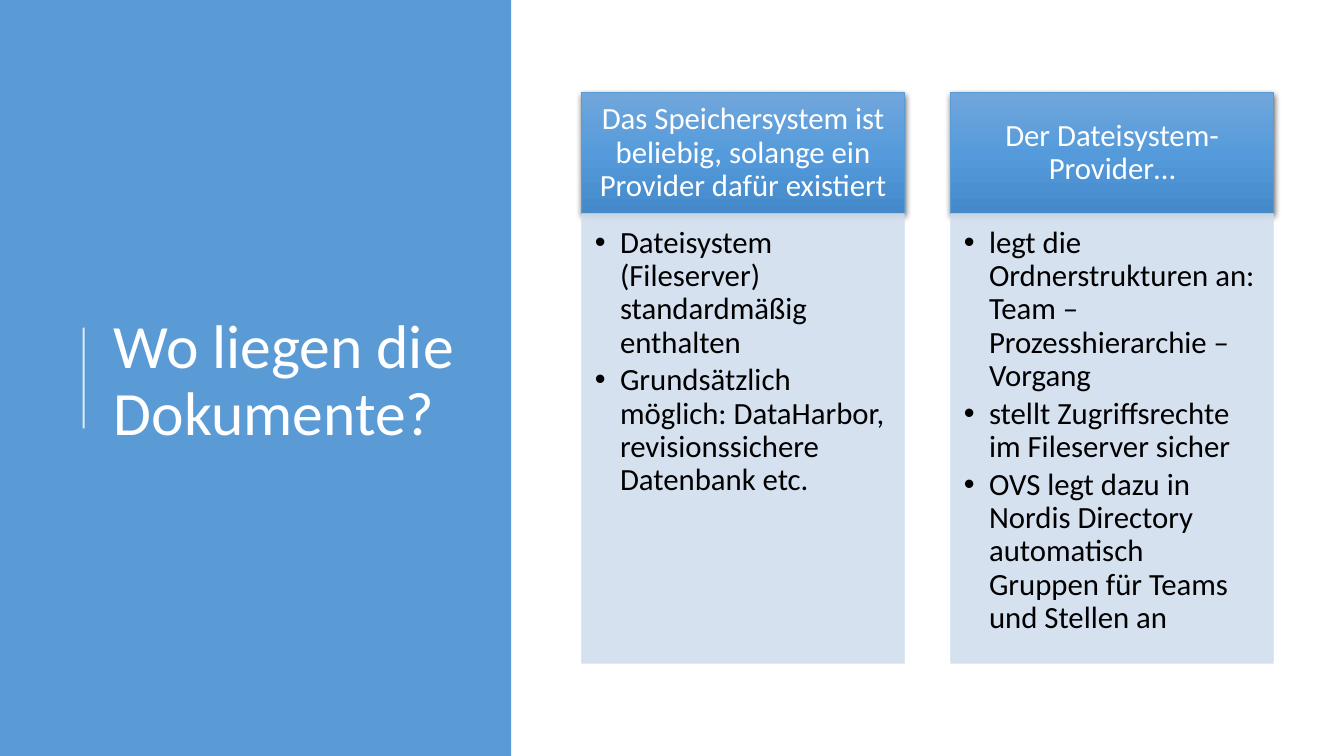
from pptx import Presentation
from pptx.dml.color import RGBColor
from pptx.enum.shapes import MSO_CONNECTOR, MSO_SHAPE
from pptx.enum.text import MSO_ANCHOR, PP_ALIGN
from pptx.oxml import parse_xml
from pptx.oxml.ns import nsdecls, qn
from pptx.util import Pt
from lxml.etree import SubElement

PX = 9144
WIDE, HIGH = 1333, 750
BLUE = RGBColor(0x5B, 0x9B, 0xD5)
PALE = RGBColor(0xD2, 0xDE, 0xEF)
WHITE = RGBColor(0xFF, 0xFF, 0xFF)
BLACK = RGBColor(0, 0, 0)
GRADE = ((0, RGBColor(0x71, 0xA6, 0xDB)),
         (50, RGBColor(0x55, 0x9B, 0xDB)),
         (100, RGBColor(0x44, 0x8A, 0xCA)))
LEFT, STEP, WIDTH = 577, 366, 320
TOP, SPLIT, END = 92, 212, 658
CARDS = (
    ("Das Speichersystem ist beliebig, solange ein Provider dafür existiert",
     ("Dateisystem (Fileserver) standardmäßig enthalten",
      "Grundsätzlich möglich: DataHarbor, revisionssichere Datenbank etc.")),
    ("Der Dateisystem-Provider…",
     ("legt die Ordnerstrukturen an: Team – Prozesshierarchie – Vorgang",
      "stellt Zugriffsrechte im Fileserver sicher",
      "OVS legt dazu in Nordis Directory automatisch Gruppen für Teams "
      "und Stellen an")),
)


def scale(*sizes):
    return [size * PX for size in sizes]


def fade(node, share):
    for color in node.iter(qn("a:srgbClr")):
        SubElement(color, qn("a:alpha"), val=str(share * 1000))


def shade(shape):
    stops = "".join(
        f'<a:gs pos="{spot * 1000}"><a:srgbClr val="{color}"/></a:gs>'
        for spot, color in GRADE)
    fill = parse_xml(
        f'<a:gradFill {nsdecls("a")} rotWithShape="1"><a:gsLst>{stops}</a:gsLst>'
        '<a:lin ang="5400000" scaled="0"/></a:gradFill>')
    props = shape.element.spPr
    props.replace(props.find(qn("a:solidFill")), fill)
    glow = SubElement(props.find(qn("a:effectLst")), qn("a:outerShdw"),
                      blurRad=str(Pt(4.5)), dist=str(Pt(1.5)),
                      dir="5400000", algn="ctr", rotWithShape="0")
    SubElement(glow, qn("a:srgbClr"), val=str(BLACK))
    fade(glow, 63)


def add_box(slide, place, fill, line=None):
    box = slide.shapes.add_shape(MSO_SHAPE.RECTANGLE, *scale(*place))
    box.shadow.inherit = False
    box.fill.solid()
    box.fill.fore_color.rgb = fill
    if line is None:
        box.line.fill.background()
    else:
        box.line.color.rgb = line
        box.line.width = Pt(0.5)
    return box


def add_bullet(para):
    props = para._p.get_or_add_pPr()
    indent = 25 * PX
    props.set("marL", str(indent))
    props.set("indent", str(-indent))
    SubElement(props, qn("a:buFont"), typeface="Arial")
    SubElement(props, qn("a:buChar"), char="•")


def write(shape, *texts, size=22, color=BLACK, align=PP_ALIGN.LEFT,
          anchor=MSO_ANCHOR.TOP, inset=(10, 5, 10, 5), bullet=False, after=0):
    frame = shape.text_frame
    frame.word_wrap = True
    frame.vertical_anchor = anchor
    (frame.margin_left, frame.margin_top,
     frame.margin_right, frame.margin_bottom) = scale(*inset)
    for index, text in enumerate(texts):
        para = frame.add_paragraph() if index else frame.paragraphs[0]
        para.alignment = align
        para.line_spacing = 0.9
        para.space_after = Pt(after)
        if bullet:
            add_bullet(para)
        run = para.add_run()
        run.text = text
        run.font.name = "Calibri"
        run.font.size = Pt(size)
        run.font.color.rgb = color


def add_rule(slide):
    rule = slide.shapes.add_connector(
        MSO_CONNECTOR.STRAIGHT, *scale(83, 325, 83, 425))
    rule.line.color.rgb = WHITE
    rule.line.width = Pt(1.5)
    props = rule.element.spPr
    fade(props, 80)
    SubElement(props, qn("a:effectLst"))


def add_card(slide, left, head, items):
    top = add_box(slide, (left, TOP, WIDTH, SPLIT - TOP), BLUE, BLUE)
    shade(top)
    write(top, head, color=WHITE, align=PP_ALIGN.CENTER,
          anchor=MSO_ANCHOR.MIDDLE, inset=(17, 10, 17, 10))
    body = add_box(slide, (left, SPLIT, WIDTH, END - SPLIT), PALE, PALE)
    fade(body.element.spPr, 90)
    write(body, *items, inset=(13, 13, 17, 19), bullet=True, after=3.3)


def main():
    deck = Presentation()
    deck.slide_width, deck.slide_height = scale(WIDE, HIGH)
    slide = deck.slides.add_slide(deck.slide_layouts[6])
    add_box(slide, (0, 0, 507, HIGH), BLUE)
    title = slide.shapes.add_textbox(*scale(103, 78, 369, 602))
    write(title, "Wo liegen die Dokumente?", size=44, color=WHITE,
          anchor=MSO_ANCHOR.MIDDLE)
    add_rule(slide)
    for index, (head, items) in enumerate(CARDS):
        add_card(slide, LEFT + index * STEP, head, items)
    deck.save("out.pptx")


if __name__ == "__main__":
    main()
